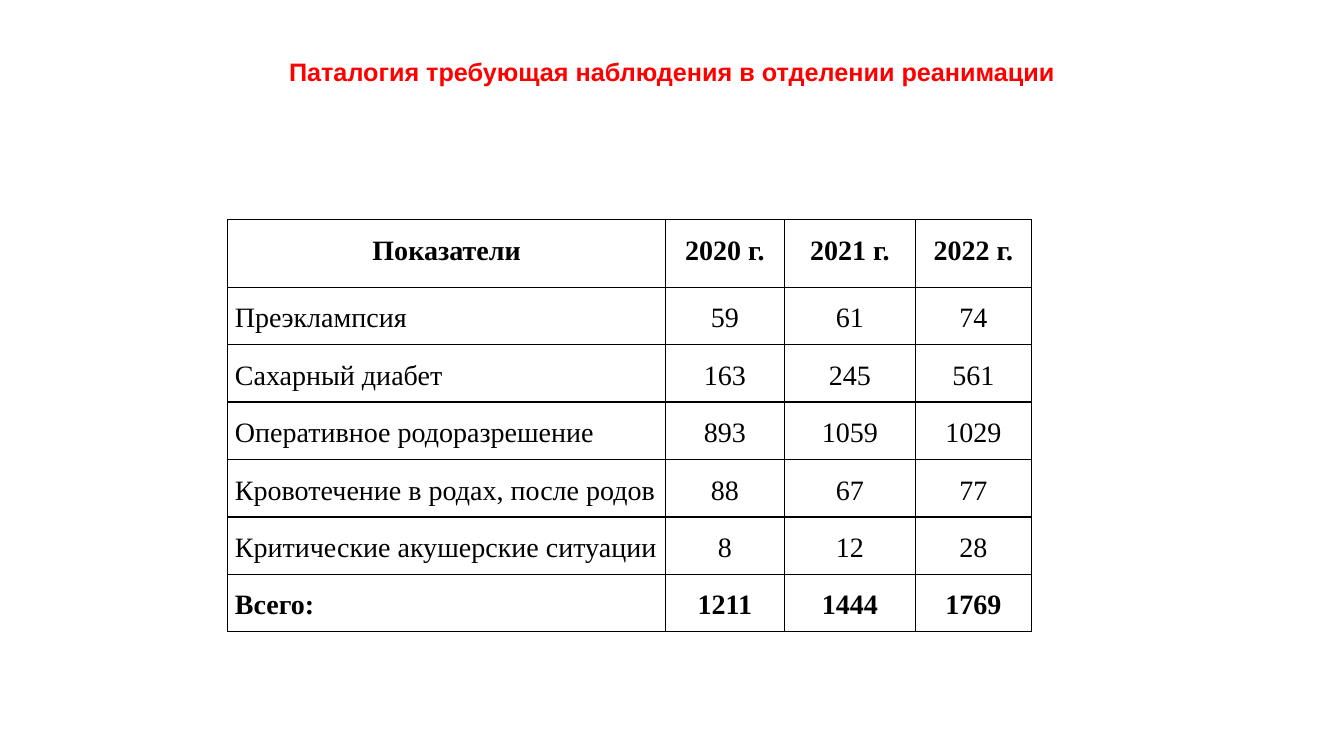
"""Build a slide with a table of conditions that need intensive care."""
from dataclasses import dataclass

from lxml import etree
from pptx import Presentation
from pptx.dml.color import RGBColor
from pptx.enum import text as t
from pptx.oxml import ns
from pptx.util import Inches, Pt

RED = RGBColor(0xFF, 0x00, 0x00)
BLACK = RGBColor(0x00, 0x00, 0x00)
COLUMN_WIDTHS = (4.34, 1.18, 1.3, 1.15)
HEADER_HEIGHT, ROW_HEIGHT = 0.67, 0.57


@dataclass(frozen=True)
class Row:
    label: str
    values: tuple
    bold: bool = False
    header: bool = False


ROWS = (
    Row("Показатели", ("2020 г.", "2021 г.", "2022 г."), bold=True, header=True),
    Row("Преэклампсия", (59, 61, 74)),
    Row("Сахарный диабет", (163, 245, 561)),
    Row("Оперативное родоразрешение", (893, 1059, 1029)),
    Row("Кровотечение в родах, после родов", (88, 67, 77)),
    Row("Критические акушерские ситуации", (8, 12, 28)),
    Row("Всего:", (1211, 1444, 1769), bold=True),
)


def set_font(p, name: str, size: int, color: RGBColor, bold: bool) -> None:
    """Set the font of a whole paragraph."""
    p.font.name, p.font.size, p.font.bold = name, Pt(size), bold
    p.font.color.rgb = color


def add_borders(cell) -> None:
    """Draw a thin line on all four sides of a cell."""
    tc_pr = cell._tc.get_or_add_tcPr()
    for i, side in enumerate(("lnL", "lnR", "lnT", "lnB")):
        line = etree.Element(ns.qn(f"a:{side}"), w=str(Pt(1)))
        fill = etree.SubElement(line, ns.qn("a:solidFill"))
        etree.SubElement(fill, ns.qn("a:srgbClr"), val=str(BLACK))
        tc_pr.insert(i, line)


def fill_cell(cell, value, bold: bool, centered: bool) -> None:
    """Write and format one table cell."""
    cell.margin_left = cell.margin_right = Inches(0.07)
    cell.margin_top = cell.margin_bottom = 0
    cell.fill.background()
    add_borders(cell)
    cell.text = str(value)
    p = cell.text_frame.paragraphs[0]
    p.alignment = t.PP_ALIGN.CENTER if centered else t.PP_ALIGN.LEFT
    p.line_spacing = 1.5
    set_font(p, "Times New Roman", 20, BLACK, bold)


def add_title(slide, title: str) -> None:
    """Place and format the slide title."""
    sp = slide.shapes.title
    sp.left, sp.top = Inches(0.8), Inches(0.12)
    sp.width, sp.height = Inches(11.73), Inches(1.46)
    tf = sp.text_frame
    tf.text = title
    tf.word_wrap = True
    tf.auto_size = t.MSO_AUTO_SIZE.NONE
    tf.vertical_anchor = t.MSO_ANCHOR.MIDDLE
    tf.margin_left = tf.margin_right = tf.margin_top = 0
    tf.margin_bottom = Inches(0.28)
    p = tf.paragraphs[0]
    p.alignment = t.PP_ALIGN.CENTER
    set_font(p, "Arial", 18, RED, True)


def add_indicators(slide, rows: tuple) -> None:
    """Add the table of indicators by year."""
    height = HEADER_HEIGHT + ROW_HEIGHT * (len(rows) - 1)
    table = slide.shapes.add_table(
        len(rows), len(COLUMN_WIDTHS), Inches(2.26), Inches(2.18),
        Inches(sum(COLUMN_WIDTHS)), Inches(height)).table
    table.first_row = table.horz_banding = False
    for column, width in zip(table.columns, COLUMN_WIDTHS):
        column.width = Inches(width)
    for i, row in enumerate(rows):
        table.rows[i].height = Inches(HEADER_HEIGHT if row.header else ROW_HEIGHT)
        for j, value in enumerate((row.label, *row.values)):
            fill_cell(table.cell(i, j), value, row.bold, row.header or j > 0)


def main() -> None:
    """Create and save the presentation."""
    prs = Presentation()
    prs.slide_width, prs.slide_height = Inches(13.33), Inches(7.5)
    s = prs.slides.add_slide(prs.slide_layouts[5])
    add_title(s, "Паталогия требующая наблюдения в отделении реанимации")
    add_indicators(s, ROWS)
    prs.save("out.pptx")


if __name__ == "__main__":
    main()
